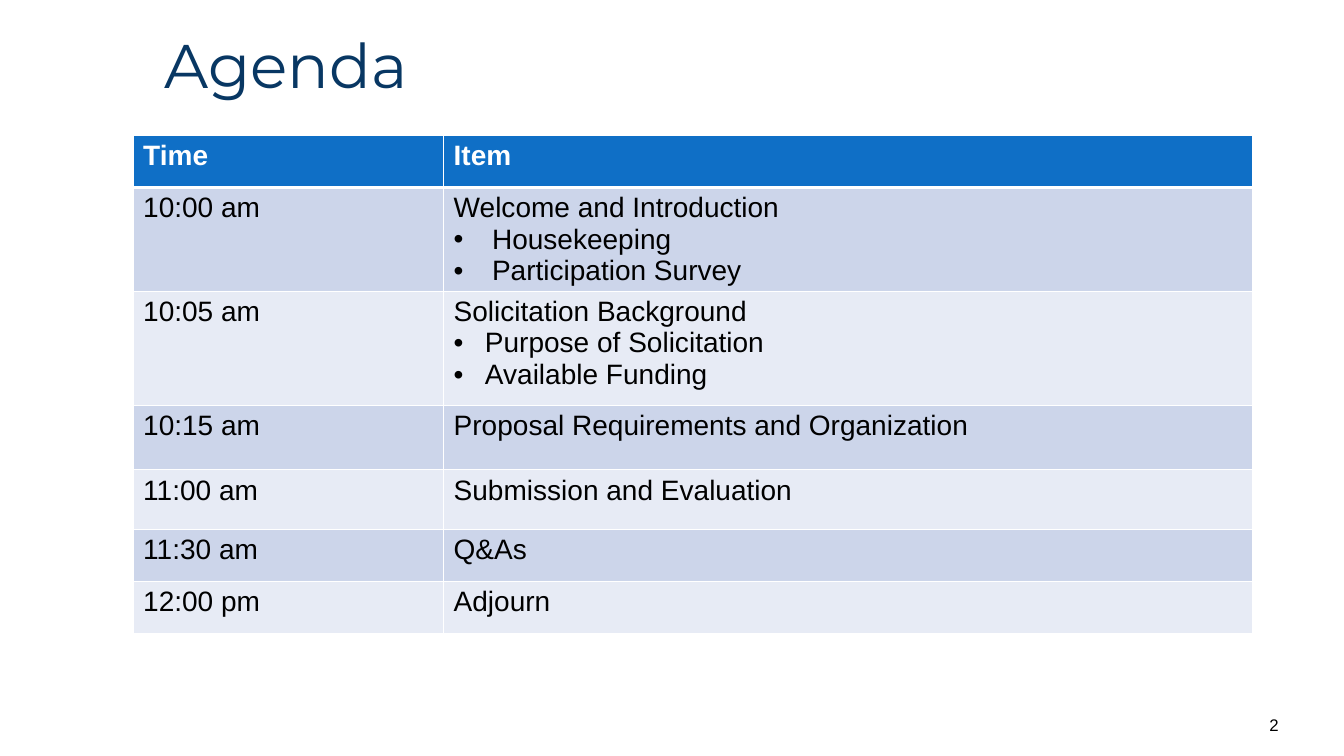
from dataclasses import dataclass

import pptx
import pptx.dml.color
import pptx.enum.text
import pptx.oxml
import pptx.oxml.ns
import pptx.presentation
import pptx.slide
import pptx.table
import pptx.util
from lxml import etree
from pptx.dml.color import RGBColor
from pptx.util import Inches

NAVY = RGBColor(0x08, 0x37, 0x63)
BLUE = RGBColor(0x0F, 0x6F, 0xC6)
DARK_BAND = RGBColor(0xCC, 0xD5, 0xEA)
LIGHT_BAND = RGBColor(0xE7, 0xEB, 0xF5)
BLACK = RGBColor(0, 0, 0)
WHITE = RGBColor(0xFF, 0xFF, 0xFF)

COLUMN_WIDTHS = (3.08, 8.02)
HEADER_HEIGHT = 0.52
THIN_BORDER, THICK_BORDER = 1, 3


@dataclass(frozen=True)
class AgendaItem:
    time: str
    topic: str
    height: float
    points: tuple[str, ...] = ()
    indent: float = 0


AGENDA = (
    AgendaItem("10:00 am", "Welcome and Introduction", 1.03,
               ("Housekeeping", "Participation Survey"), 0.38),
    AgendaItem("10:05 am", "Solicitation Background", 1.13,
               ("Purpose of Solicitation", "Available Funding"), 0.31),
    AgendaItem("10:15 am", "Proposal Requirements and Organization", 0.64),
    AgendaItem("11:00 am", "Submission and Evaluation", 0.59),
    AgendaItem("11:30 am", "Q&As", 0.52),
    AgendaItem("12:00 pm", "Adjourn", 0.52),
)


def add_bullet(paragraph, indent: float) -> None:
    properties = paragraph._p.get_or_add_pPr()
    properties.set("marL", str(Inches(indent)))
    properties.set("indent", str(-Inches(indent)))
    font = etree.SubElement(properties, pptx.oxml.ns.qn("a:buFont"))
    font.set("typeface", "Arial")
    bullet = etree.SubElement(properties, pptx.oxml.ns.qn("a:buChar"))
    bullet.set("char", "•")


def set_borders(cell: pptx.table._Cell, top: float, bottom: float) -> None:
    properties = cell._tc.get_or_add_tcPr()
    widths = {"L": THIN_BORDER, "R": THIN_BORDER, "T": top, "B": bottom}
    for side, width in widths.items():
        line = etree.SubElement(properties, pptx.oxml.ns.qn(f"a:ln{side}"))
        line.set("w", str(pptx.util.Pt(width)))
        fill = etree.SubElement(line, pptx.oxml.ns.qn("a:solidFill"))
        color = etree.SubElement(fill, pptx.oxml.ns.qn("a:srgbClr"))
        color.set("val", str(WHITE))


def fill_cell(cell: pptx.table._Cell, text: str, row: int,
              points: tuple[str, ...] = (), indent: float = 0) -> None:
    is_header = row == 0
    set_borders(cell,
                top=THICK_BORDER if row == 1 else THIN_BORDER,
                bottom=THICK_BORDER if is_header else THIN_BORDER)
    cell.fill.solid()
    band = DARK_BAND if row % 2 else LIGHT_BAND
    cell.fill.fore_color.rgb = BLUE if is_header else band
    cell.text_frame.text = "\n".join((text, *points))
    for index, paragraph in enumerate(cell.text_frame.paragraphs):
        if index > 0:
            add_bullet(paragraph, indent)
        paragraph.font.name = "Arial"
        paragraph.font.size = pptx.util.Pt(20)
        paragraph.font.bold = is_header
        paragraph.font.color.rgb = WHITE if is_header else BLACK


def add_title(slide: pptx.slide.Slide) -> None:
    title = slide.shapes.title
    title.left, title.top = Inches(1.53), Inches(0.11)
    title.width, title.height = Inches(10.89), Inches(1.14)
    title.text_frame.text = "Agenda"
    title.text_frame.vertical_anchor = pptx.enum.text.MSO_ANCHOR.MIDDLE
    paragraph = title.text_frame.paragraphs[0]
    paragraph.alignment = pptx.enum.text.PP_ALIGN.LEFT
    paragraph.line_spacing = 0.9
    paragraph.font.name = "Montserrat"
    paragraph.font.size = pptx.util.Pt(44)
    paragraph.font.color.rgb = NAVY


def add_agenda(slide: pptx.slide.Slide) -> None:
    heights = (HEADER_HEIGHT, *(item.height for item in AGENDA))
    table = slide.shapes.add_table(
        len(heights), len(COLUMN_WIDTHS), Inches(1.32), Inches(1.34),
        Inches(sum(COLUMN_WIDTHS)), Inches(sum(heights))).table
    for column, width in zip(table.columns, COLUMN_WIDTHS):
        column.width = Inches(width)
    for row, height in zip(table.rows, heights):
        row.height = Inches(height)
    fill_cell(table.cell(0, 0), "Time", 0)
    fill_cell(table.cell(0, 1), "Item", 0)
    for row, item in enumerate(AGENDA, start=1):
        fill_cell(table.cell(row, 0), item.time, row)
        fill_cell(table.cell(row, 1), item.topic, row, item.points, item.indent)


def add_slide_number(slide: pptx.slide.Slide) -> None:
    box = slide.shapes.add_textbox(
        Inches(10.81), Inches(6.99), Inches(1.97), Inches(0.4))
    box.text_frame.word_wrap = True
    box.text_frame.vertical_anchor = pptx.enum.text.MSO_ANCHOR.MIDDLE
    paragraph = box.text_frame.paragraphs[0]
    paragraph.alignment = pptx.enum.text.PP_ALIGN.RIGHT
    run = paragraph.add_run()
    run.text = "2"
    run.font.name = "Arial"
    run.font.size = pptx.util.Pt(12)
    run.font.color.rgb = BLACK


def main() -> None:
    presentation = pptx.Presentation()
    presentation.slide_width = Inches(13.33)
    presentation.slide_height = Inches(7.5)
    slide = presentation.slides.add_slide(presentation.slide_layouts[5])

    # Heading
    add_title(slide)
    # Timetable
    add_agenda(slide)
    # Footer
    add_slide_number(slide)

    presentation.save("out.pptx")


if __name__ == "__main__":
    main()
